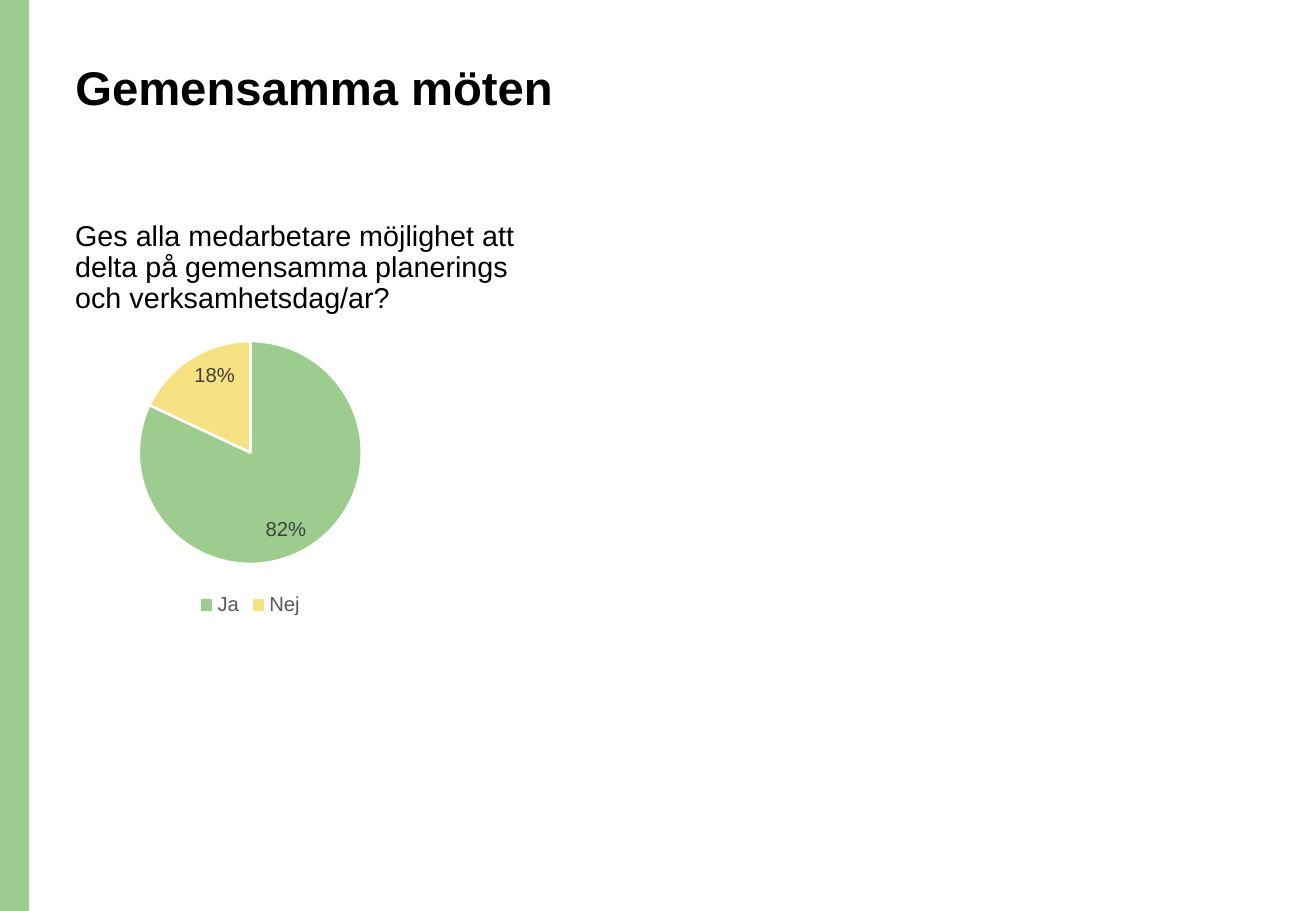
from pptx import Presentation
from pptx import util as u
from pptx.chart.data import CategoryChartData
from pptx.dml.color import RGBColor
from pptx.enum import chart as charts, shapes, text

COLORS = {"Ja": "9DCC8F", "Nej": "F6E183", "text": "000000",
          "label": "404040", "legend": "595959", "edge": "FFFFFF"}
FONT = "Arial"
LEFT = u.Inches(0.52)


def style_font(font, size, color, bold=False):
    font.name = FONT
    font.size = u.Pt(size)
    font.bold = bold
    font.color.rgb = RGBColor.from_string(COLORS[color])


def write_text(box, wording, size, bold=False):
    frame = box.text_frame
    frame.word_wrap = True
    frame.auto_size = text.MSO_AUTO_SIZE.NONE
    frame.vertical_anchor = text.MSO_ANCHOR.TOP
    para = frame.paragraphs[0]
    para.alignment = text.PP_ALIGN.LEFT
    para.line_spacing = 0.9
    span = para.add_run()
    span.text = wording
    style_font(span.font, size, "text", bold)


deck = Presentation()
deck.slide_width, deck.slide_height = u.Inches(10.83), u.Inches(7.5)
page = deck.slides.add_slide(deck.slide_layouts[5])

# Green side bar
bar = page.shapes.add_shape(shapes.MSO_SHAPE.RECTANGLE, 0, 0,
                            u.Inches(0.24), deck.slide_height)
bar.shadow.inherit = False
bar.fill.solid()
bar.fill.fore_color.rgb = RGBColor.from_string(COLORS["Ja"])
bar.line.fill.background()

# Title
title = page.shapes.title
title.left, title.top = LEFT, u.Inches(0.48)
title.width, title.height = u.Inches(9.34), u.Inches(1.02)
write_text(title, "Gemensamma möten", 28, bold=True)

# Question
question = page.shapes.add_textbox(LEFT, u.Inches(1.78), u.Inches(3.92), u.Inches(1.02))
write_text(question, "Ges alla medarbetare möjlighet att delta på gemensamma "
                     "planerings och verksamhetsdag/ar?", 17)

# Pie of answers
answers = {"Ja": 0.82, "Nej": 0.18}
data = CategoryChartData(number_format="0%")
data.categories = list(answers)
data.add_series("Series 1", list(answers.values()))
pie = page.shapes.add_chart(charts.XL_CHART_TYPE.PIE, u.Inches(0.67), u.Inches(2.67),
                            u.Inches(2.78), u.Inches(2.44), data).chart
style_font(pie.font, 10, "text")
pie.has_title = False
pie.has_legend = True
pie.legend.position = charts.XL_LEGEND_POSITION.BOTTOM
pie.legend.include_in_layout = False
style_font(pie.legend.font, 12, "legend")

plot = pie.plots[0]
plot.vary_by_categories = True
for index, answer in enumerate(answers):
    piece = plot.series[0].points[index].format
    piece.fill.solid()
    piece.fill.fore_color.rgb = RGBColor.from_string(COLORS[answer])
    piece.line.width = u.Pt(1.5)
    piece.line.color.rgb = RGBColor.from_string(COLORS["edge"])

# Percent labels
labels = plot.series[0].data_labels
labels.show_value = True
labels.number_format = "0%"
labels.number_format_is_linked = False
labels.position = charts.XL_LABEL_POSITION.INSIDE_END
style_font(labels.font, 12, "label")

deck.save("out.pptx")
